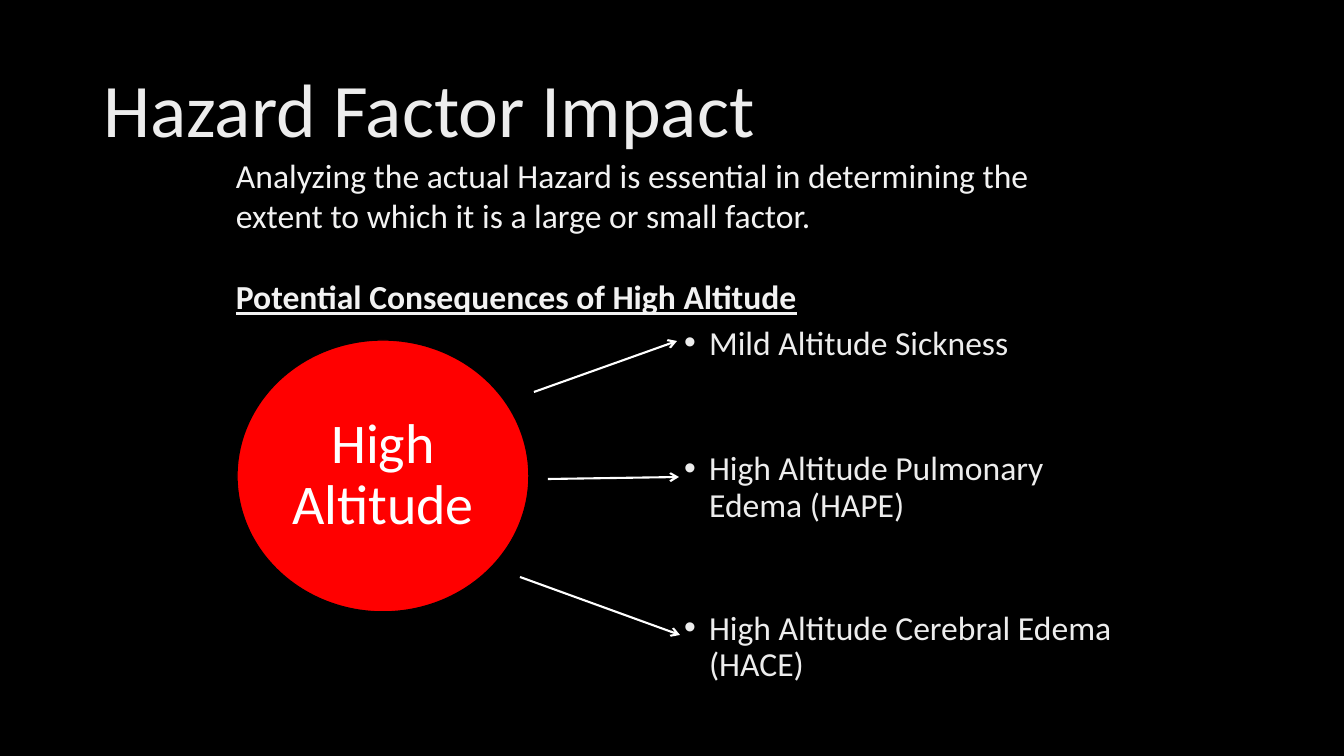
from lxml import etree
from pptx import Presentation
from pptx.dml.color import RGBColor
from pptx.enum.shapes import MSO_CONNECTOR, MSO_SHAPE
from pptx.enum.text import MSO_ANCHOR, MSO_AUTO_SIZE, PP_ALIGN
from pptx.oxml.ns import qn
from pptx.util import Emu, Pt

OVAL = MSO_SHAPE.OVAL
LINE = MSO_CONNECTOR.STRAIGHT
MIDDLE, TOP = MSO_ANCHOR.MIDDLE, MSO_ANCHOR.TOP
LEFT, CENTER = PP_ALIGN.LEFT, PP_ALIGN.CENTER
FIXED = MSO_AUTO_SIZE.NONE

BLACK = RGBColor(0, 0, 0)
WHITE = RGBColor(255, 255, 255)
PALE = RGBColor(0xED, 0xED, 0xED)
SOFT = RGBColor(0xF2, 0xF2, 0xF2)
RED = RGBColor(255, 0, 0)
FONT = "Calibri"
SCALE = 914400 / 100.8


def px(n):
    return Emu(round(n * SCALE))


def place(shape, box):
    shape.left, shape.top, shape.width, shape.height = map(px, box)


def setup(frame, anchor):
    frame.word_wrap = True
    frame.auto_size = FIXED
    frame.vertical_anchor = anchor


def write(para, text, size, color, align=LEFT, lead=0.9, before=0):
    """Fill one paragraph with a single run and return that run."""
    para.alignment = align
    para.line_spacing = lead
    para.space_before = Pt(before)
    run = para.add_run()
    run.text = text
    run.font.name = FONT
    run.font.size = Pt(size)
    run.font.color.rgb = color
    return run


def bullet(para, indent):
    props = para._p.get_or_add_pPr()
    props.set("marL", str(px(indent)))
    props.set("indent", str(-px(indent)))
    etree.SubElement(props, qn("a:buFont")).set("typeface", "Arial")
    etree.SubElement(props, qn("a:buChar")).set("char", "•")


def heading(slide, box):
    title = slide.shapes.title
    place(title, box)
    setup(title.text_frame, MIDDLE)
    write(title.text_frame.paragraphs[0], "Hazard Factor Impact", 54, PALE)


def intro(slide, box):
    frame = slide.shapes.add_textbox(*map(px, box)).text_frame
    setup(frame, TOP)
    write(frame.paragraphs[0],
          "Analyzing the actual Hazard is essential in determining the "
          "extent to which it is a large or small factor.", 24, SOFT, lead=1)
    run = write(frame.add_paragraph(), "Potential Consequences of High Altitude",
                24, SOFT, lead=1, before=29)
    run.font.bold = True
    run.font.underline = True


def effects(slide, box):
    """List the consequences, spaced to meet the arrows."""
    body = slide.placeholders[1]
    place(body, box)
    frame = body.text_frame
    setup(frame, TOP)
    items = [("Mild Altitude Sickness", 0),
             ("High Altitude Pulmonary Edema (HAPE)", 64),
             ("High Altitude Cerebral Edema (HACE)", 62)]
    for i, (text, gap) in enumerate(items):
        para = frame.add_paragraph() if i else frame.paragraphs[0]
        bullet(para, 25)
        write(para, text, 24, PALE, before=gap)


def cause(slide, box):
    disc = slide.shapes.add_shape(OVAL, *map(px, box))
    disc.shadow.inherit = False
    disc.fill.solid()
    disc.fill.fore_color.rgb = RED
    disc.line.color.rgb = BLACK
    disc.line.width = Pt(1)
    frame = disc.text_frame
    setup(frame, MIDDLE)
    frame.margin_left = frame.margin_right = px(7)
    frame.margin_top = frame.margin_bottom = px(7)
    write(frame.paragraphs[0], "High Altitude", 40, WHITE, CENTER)


def arrow(slide, *ends):
    link = slide.shapes.add_connector(LINE, *map(px, ends))
    link.line.color.rgb = WHITE
    link.line.width = Pt(1.5)
    etree.SubElement(link.line._get_or_add_ln(), qn("a:tailEnd")).set("type", "arrow")
    etree.SubElement(link._element.spPr, qn("a:effectLst"))


def main():
    deck = Presentation()
    deck.slide_width, deck.slide_height = px(1344), px(756)
    slide = deck.slides.add_slide(deck.slide_layouts[1])
    slide.background.fill.solid()
    slide.background.fill.fore_color.rgb = BLACK
    heading(slide, (93, 40, 1159, 146))
    effects(slide, (674, 321, 455, 398))
    cause(slide, (237, 340, 292, 272))
    for ends in ((534, 392, 677, 341), (548, 479, 679, 477), (520, 577, 680, 635)):
        arrow(slide, *ends)
    intro(slide, (226, 150, 859, 173))
    deck.save("out.pptx")


if __name__ == "__main__":
    main()
